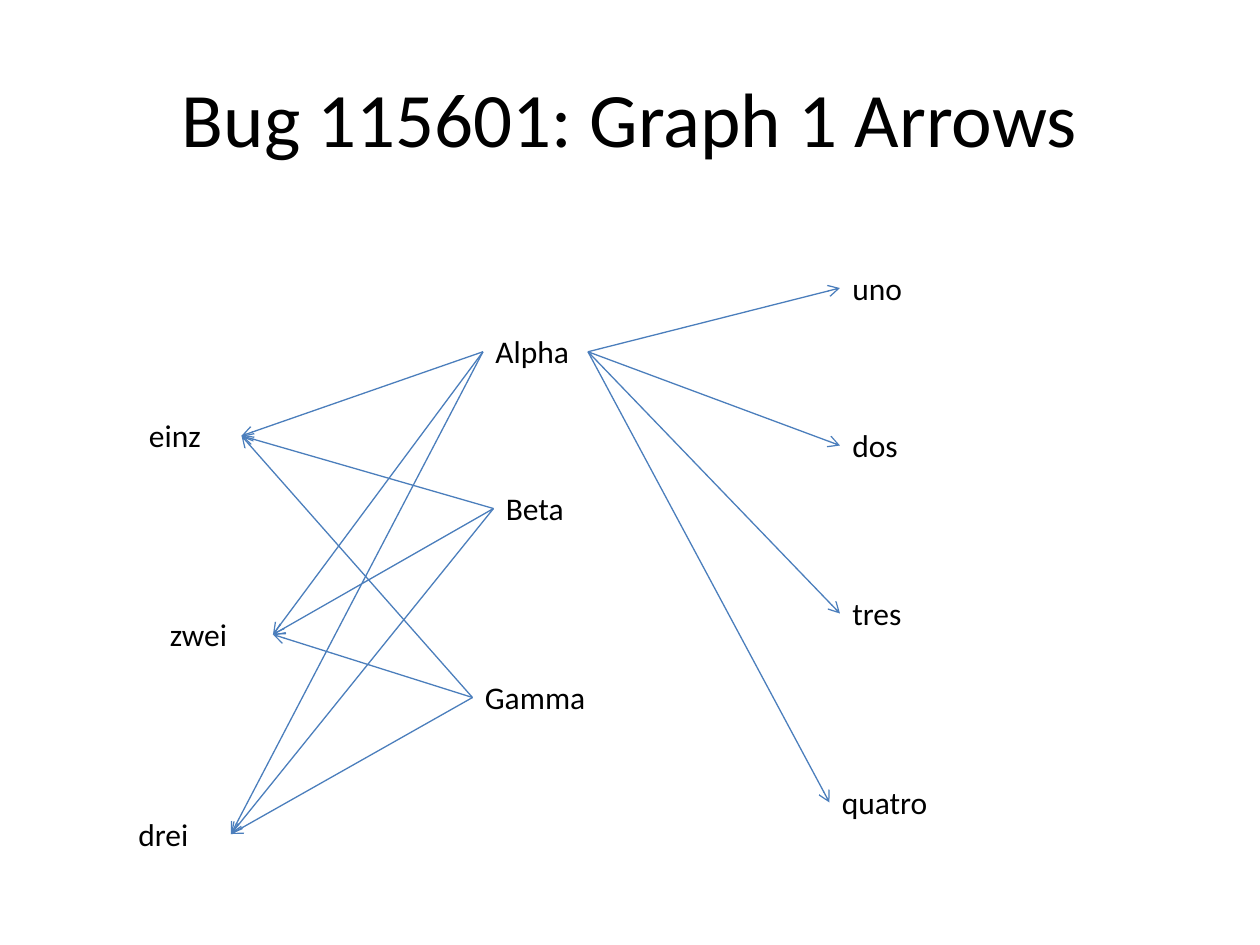
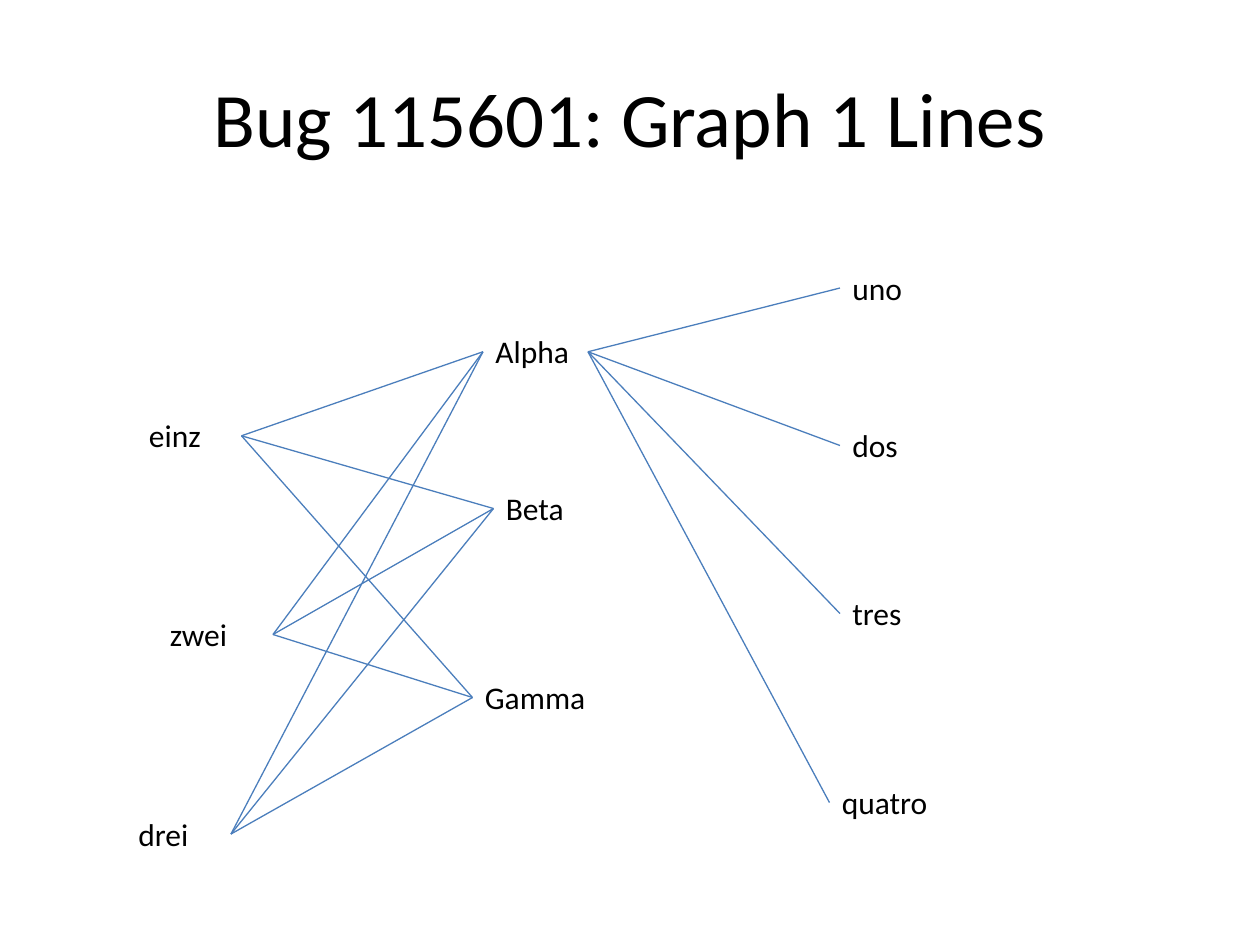
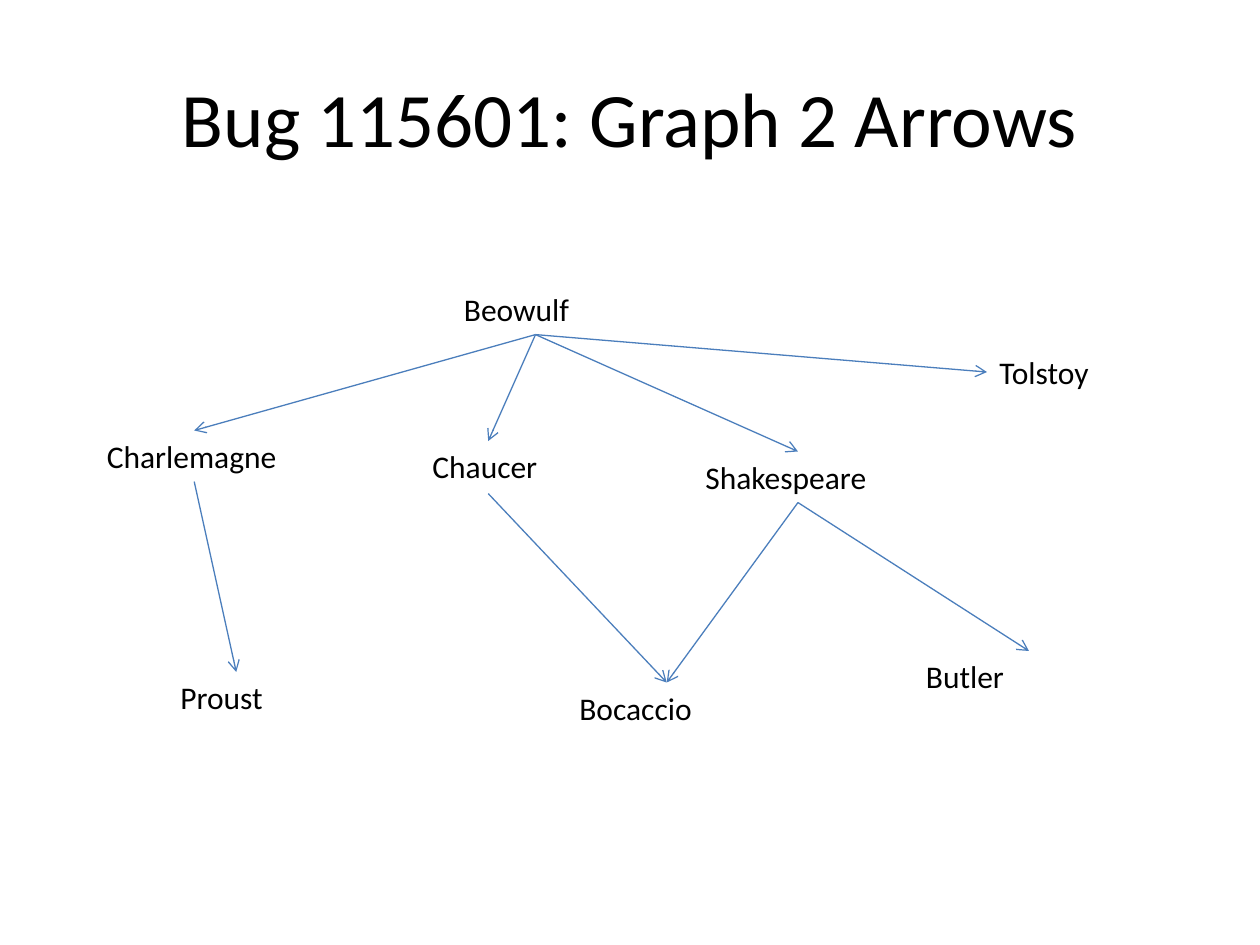
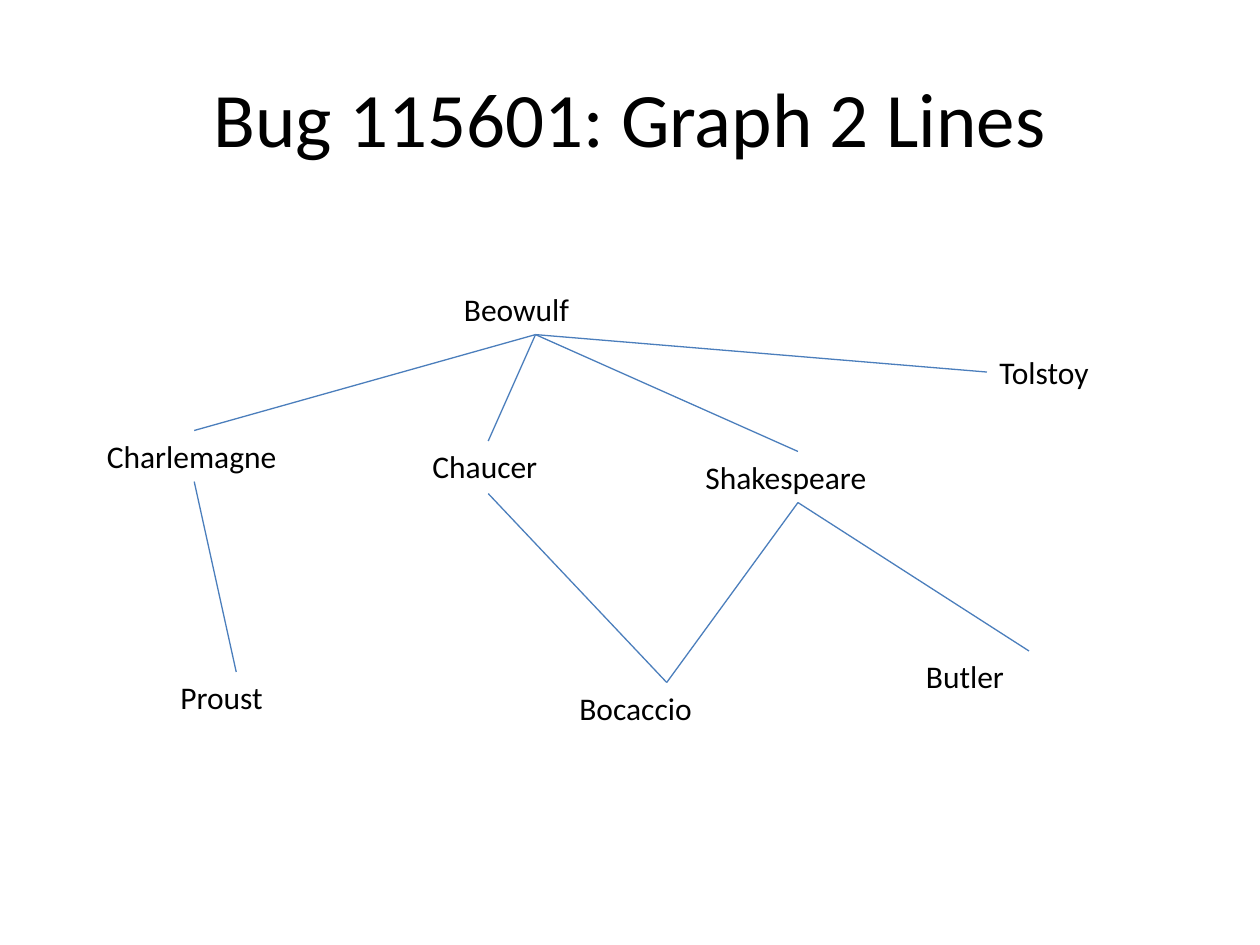
from dataclasses import dataclass
from itertools import product

from lxml import etree
from pptx import Presentation
from pptx.dml.color import RGBColor
from pptx.enum.shapes import MSO_CONNECTOR
from pptx.enum.text import MSO_ANCHOR, MSO_AUTO_SIZE, PP_ALIGN
from pptx.oxml.ns import qn
from pptx.util import Cm, Pt

STRAIGHT = MSO_CONNECTOR.STRAIGHT
MIDDLE = MSO_ANCHOR.MIDDLE
TOP_ANCHOR = MSO_ANCHOR.TOP
NO_FIT = MSO_AUTO_SIZE.NONE
GROW = MSO_AUTO_SIZE.SHAPE_TO_FIT_TEXT
CENTER = PP_ALIGN.CENTER
LEFT_ALIGNED = PP_ALIGN.LEFT
TOP, LEFT, BOTTOM, RIGHT = range(4)
BLANK_LAYOUT = 6


@dataclass(frozen=True)
class Theme:
    """Colours, type sizes and measures shared by all slides."""

    font: str = "Calibri"
    text: RGBColor = RGBColor(0x00, 0x00, 0x00)
    background: RGBColor = RGBColor(0xFF, 0xFF, 0xFF)
    edge: RGBColor = RGBColor(0x4B, 0x7E, 0xBC)
    title_size: Pt = Pt(44)
    label_size: Pt = Pt(18)
    edge_width: Pt = Pt(0.75)
    grid: float = Cm(2.54) / 12
    label_height: Cm = Cm(1.03)
    tall_label_height: Cm = Cm(1.06)


@dataclass(frozen=True)
class Box:
    """A rectangular region of a slide."""

    left: int
    top: int
    width: int
    height: int


@dataclass(frozen=True)
class Node:
    """A label placed on the grid of the diagram box."""

    name: str
    column: float
    row: float
    columns: float
    tall: bool = False


@dataclass(frozen=True)
class Graph:
    """Labels and the edges that join their sides."""

    name: str
    nodes: tuple
    edges: tuple


THEME = Theme()
TITLE_BOX = Box(Cm(1.27), Cm(0.76), Cm(22.86), Cm(3.18))
DIAGRAM_BOX = Box(Cm(1.27), Cm(5.08), Cm(22.86), Cm(12.7))


def fan(sources, source_side, targets, target_side):
    """Join every source to every target."""
    return tuple(
        (source, source_side, target, target_side)
        for source, target in product(sources, targets)
    )


NUMBERS_GRAPH = Graph(
    "Graph 1",
    (
        Node("Alpha", 40, 7, 10, tall=True),
        Node("Beta", 41, 22, 9),
        Node("Gamma", 39, 40, 15),
        Node("einz", 7, 15, 10, tall=True),
        Node("zwei", 9, 34, 11),
        Node("drei", 6, 53, 10),
        Node("uno", 74, 1, 12),
        Node("dos", 74, 16, 8),
        Node("tres", 74, 32, 10),
        Node("quatro", 73, 50, 11),
    ),
    fan(("Alpha", "Beta", "Gamma"), LEFT, ("einz", "zwei", "drei"), RIGHT)
    + fan(("Alpha",), RIGHT, ("uno", "dos", "tres", "quatro"), LEFT),
)

AUTHORS_GRAPH = Graph(
    "Graph 2",
    (
        Node("Beowulf", 37, 3, 16),
        Node("Charlemagne", 3, 17, 19),
        Node("Chaucer", 34, 18, 13, tall=True),
        Node("Tolstoy", 88, 9, 14.4),
        Node("Shakespeare", 60, 19, 20),
        Node("Proust", 10, 40, 13),
        Node("Bocaccio", 48, 41, 19),
        Node("Butler", 81, 38, 22, tall=True),
    ),
    fan(("Beowulf",), BOTTOM, ("Charlemagne", "Chaucer", "Shakespeare"), TOP)
    + fan(("Beowulf",), BOTTOM, ("Tolstoy",), LEFT)
    + fan(("Chaucer", "Shakespeare"), BOTTOM, ("Bocaccio",), TOP)
    + fan(("Shakespeare",), BOTTOM, ("Butler",), TOP)
    + fan(("Charlemagne",), BOTTOM, ("Proust",), TOP),
)


def add_text(slide, box, text, size, alignment, anchor, fit):
    """Add a one-run text box that fills the given box."""
    shape = slide.shapes.add_textbox(box.left, box.top, box.width, box.height)
    frame = shape.text_frame
    frame.word_wrap = True
    frame.auto_size = fit
    frame.vertical_anchor = anchor
    paragraph = frame.paragraphs[0]
    paragraph.alignment = alignment
    run = paragraph.add_run()
    run.text = text
    run.font.name = THEME.font
    run.font.size = size
    run.font.color.rgb = THEME.text
    return shape


def add_title(slide, box, text):
    """Add the centred slide title."""
    add_text(slide, box, text, THEME.title_size, CENTER, MIDDLE, NO_FIT)


def add_label(slide, box, node):
    """Add the label of a node at its grid place inside the box."""
    label_box = Box(
        box.left + round(node.column * THEME.grid),
        box.top + round(node.row * THEME.grid),
        round(node.columns * THEME.grid),
        THEME.tall_label_height if node.tall else THEME.label_height,
    )
    return add_text(
        slide, label_box, node.name, THEME.label_size, LEFT_ALIGNED, TOP_ANCHOR, GROW
    )


def add_edge(slide, source, source_side, target, target_side, arrows):
    """Join two labels with a line, with an arrowhead if wanted."""
    connector = slide.shapes.add_connector(STRAIGHT, 0, 0, 0, 0)
    connector.begin_connect(source, source_side)
    connector.end_connect(target, target_side)
    connector.line.color.rgb = THEME.edge
    connector.line.width = THEME.edge_width
    properties = connector._element.spPr
    if arrows:
        line = properties.find(qn("a:ln"))
        etree.SubElement(line, qn("a:tailEnd"), type="arrow")
    etree.SubElement(properties, qn("a:effectLst"))


def add_graph(slide, box, graph, arrows):
    """Draw the labels and edges of a graph inside the box."""
    labels = {node.name: add_label(slide, box, node) for node in graph.nodes}
    for source, source_side, target, target_side in graph.edges:
        add_edge(
            slide, labels[source], source_side, labels[target], target_side, arrows
        )


def add_graph_slide(presentation, graph, arrows):
    """Add a slide with a title and one graph."""
    slide = presentation.slides.add_slide(presentation.slide_layouts[BLANK_LAYOUT])
    slide.background.fill.solid()
    slide.background.fill.fore_color.rgb = THEME.background
    style = "Arrows" if arrows else "Lines"
    add_title(slide, TITLE_BOX, f"Bug 115601: {graph.name} {style}")
    add_graph(slide, DIAGRAM_BOX, graph, arrows)


def main():
    """Build each graph with arrows and then with plain lines."""
    presentation = Presentation()
    presentation.slide_width = Cm(25.4)
    presentation.slide_height = Cm(19.05)
    for graph, arrows in product((NUMBERS_GRAPH, AUTHORS_GRAPH), (True, False)):
        add_graph_slide(presentation, graph, arrows)
    presentation.save("out.pptx")


if __name__ == "__main__":
    main()
